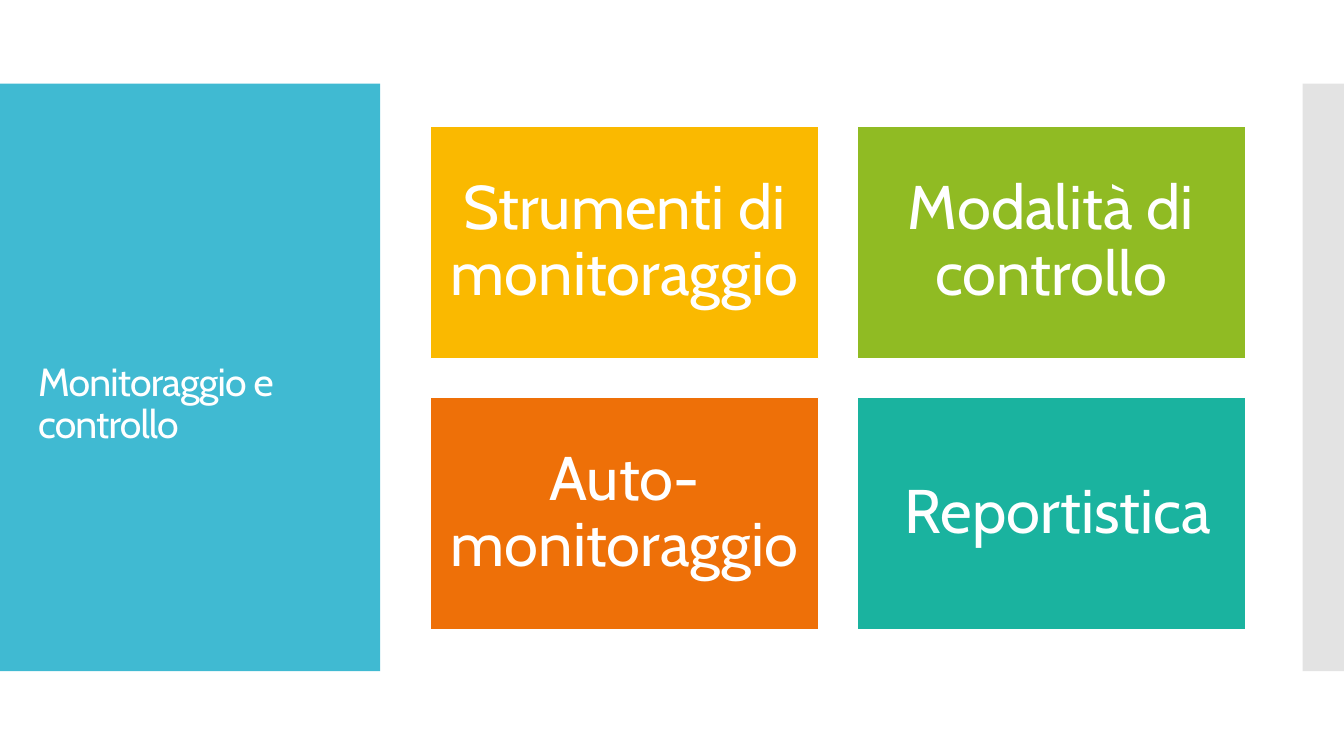
from lxml import etree
from pptx import Presentation
from pptx import util as u
from pptx.dml.color import RGBColor
from pptx.enum import shapes, text
from pptx.oxml import ns


def rgb(value):
    return RGBColor.from_string(value)


class Deck:
    """Holds the style and the current slide, and draws its elements."""

    font = "Cabin"
    white = "FFFFFF"

    def __init__(self, width, height):
        self.prs = Presentation()
        self.prs.slide_width = u.Inches(width)
        self.prs.slide_height = u.Inches(height)
        self.s = self.prs.slides.add_slide(self.prs.slide_layouts[6])

    def rect(self, x, y, w, h, fill, outline=None, alpha=None):
        sp = self.s.shapes.add_shape(
            shapes.MSO_SHAPE.RECTANGLE, *map(u.Inches, (x, y, w, h)))
        sp.shadow.inherit = False
        sp.fill.solid()
        sp.fill.fore_color.rgb = rgb(fill)
        if alpha is not None:
            color = sp._element.spPr.find(".//" + ns.qn("a:srgbClr"))
            etree.SubElement(color, ns.qn("a:alpha"), val=str(alpha * 1000))
        if outline:
            sp.line.color.rgb = rgb(outline)
            sp.line.width = u.Pt(0.85)
        else:
            sp.line.fill.background()
        return sp

    def label(self, sp, words, size, align, insets, spacing=0):
        tf = sp.text_frame
        tf.word_wrap = True
        tf.vertical_anchor = text.MSO_ANCHOR.MIDDLE
        tf.margin_left, tf.margin_top, tf.margin_right, tf.margin_bottom = map(
            u.Inches, insets)
        tf.text = words
        p = tf.paragraphs[0]
        p.alignment = align
        p.line_spacing = 0.9
        r = p.runs[0]
        r.font.name = self.font
        r.font.size = u.Pt(size)
        r.font.color.rgb = rgb(self.white)
        if spacing:
            r._r.get_or_add_rPr().set("spc", str(round(spacing * 100)))

    def title(self, x, y, w, h, words):
        sp = self.s.shapes.add_textbox(*map(u.Inches, (x, y, w, h)))
        self.label(sp, words, 28, text.PP_ALIGN.LEFT,
                   (0.1, 0.59, 0.1, 0.05), spacing=-0.6)

    def tile(self, x, y, w, h, words, fill):
        sp = self.rect(x, y, w, h, fill, outline=self.white)
        self.label(sp, words, 44, text.PP_ALIGN.CENTER, (0.18,) * 4)


def main():
    deck = Deck(13.33, 7.5)
    deck.rect(0, 0.83, 3.77, 5.83, "40BAD2")
    deck.rect(12.92, 0.83, 0.41, 5.83, "C8C8C8", alpha=50)
    deck.title(0.28, 1.23, 3.22, 5.03, "Monitoraggio e controllo")

    tiles = [
        ("Strumenti di monitoraggio", "FAB900"),
        ("Modalità di controllo", "90BB23"),
        ("Auto-monitoraggio", "EE7008"),
        (" Reportistica", "1AB39F"),
    ]
    width, height, gap = 3.85, 2.31, 0.38
    for i, (words, fill) in enumerate(tiles):
        row, col = divmod(i, 2)
        deck.tile(4.27 + col * (width + gap), 1.25 + row * (height + gap),
                  width, height, words, fill)

    deck.prs.save("out.pptx")


if __name__ == "__main__":
    main()
